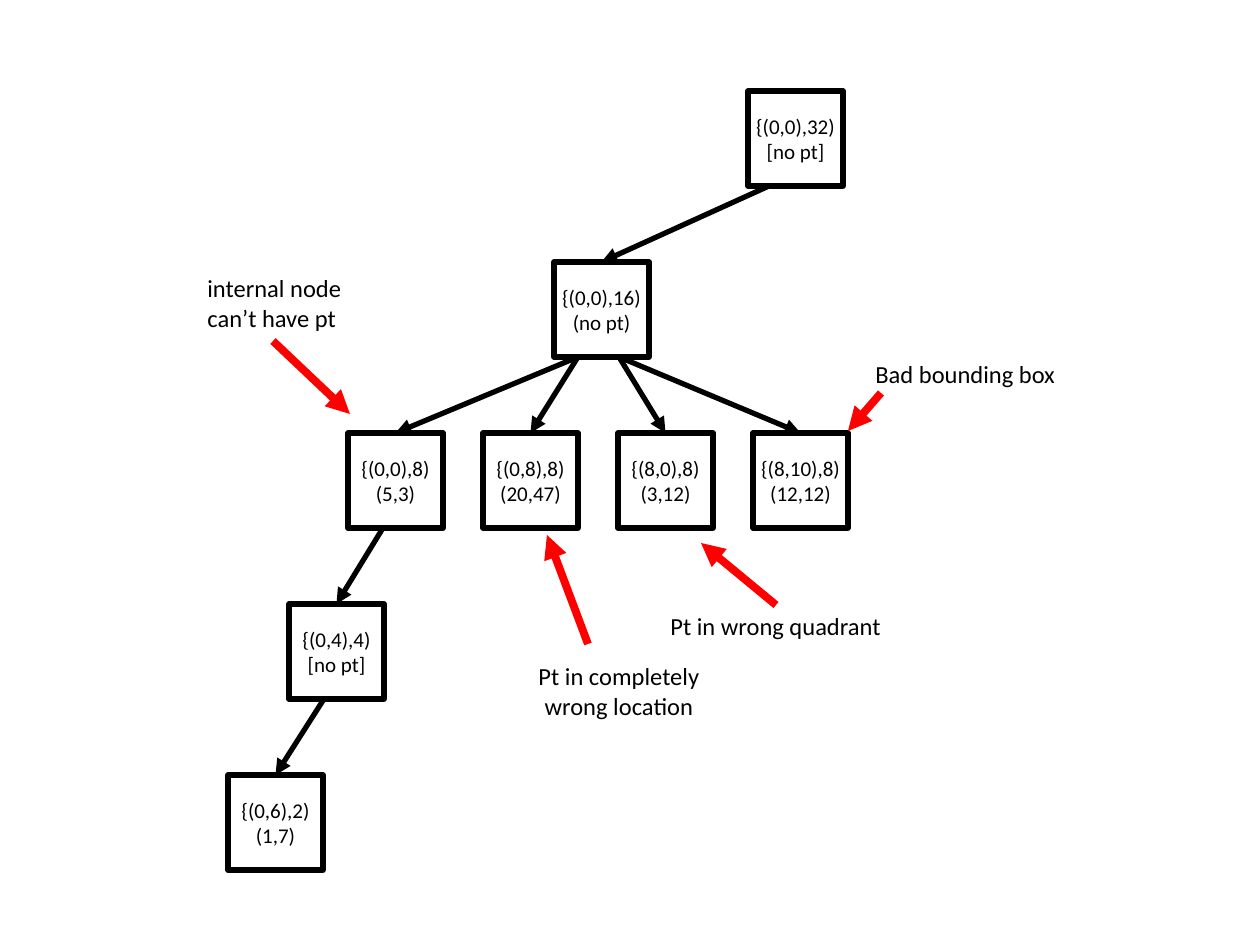
from copy import deepcopy

from lxml import etree
from pptx import Presentation, util as u
from pptx.dml.color import RGBColor
from pptx.enum import shapes, text
from pptx.oxml import ns

BLACK = RGBColor(0, 0, 0)
WHITE = RGBColor(255, 255, 255)
RED = RGBColor(255, 0, 0)
SCALE = u.Inches(1) / 126
NODE_SIZE = 95
ROOT_TOP = 91
LEVEL_GAP = 171
LEAF_LEFT = 348
LEAF_GAP = 135

QUADRANTS = [
    "{(0,0),8)\n(5,3)",
    "{(0,8),8)\n(20,47)",
    "{(8,0),8)\n(3,12)",
    "{(8,10),8)\n(12,12)",
]
NODES = {
    "half": (554, 1, "{(0,0),16)\n(no pt)"),
    **{
        f"quadrant {index}": (LEAF_LEFT + index * LEAF_GAP, 2, label)
        for index, label in enumerate(QUADRANTS)
    },
    "inner": (289, 3, "{(0,4),4)\n[no pt]"),
    "leaf": (228, 4, "{(0,6),2)\n(1,7)"),
    "root": (748, 0, "{(0,0),32)\n[no pt]"),
}
EDGES = [
    ("root", 21, "half"),
    ("half", 24, "quadrant 0"),
    ("half", 65, "quadrant 3"),
    ("half", 24, "quadrant 1"),
    ("half", 65, "quadrant 2"),
    ("quadrant 0", 35, "inner"),
    ("inner", 35, "leaf"),
]
LEFT = text.PP_ALIGN.LEFT
CENTER = text.PP_ALIGN.CENTER
NOTES = [
    ("Bad bounding box", (863, 353, 207, 43), LEFT, (18, 40), (-15, 78)),
    ("Pt in wrong quadrant", (658, 605, 238, 43), LEFT, (118, 0), (43, -62)),
    ("Pt in completely\nwrong location", (525, 655, 188, 72), CENTER, (63, -11), (22, -120)),
    ("internal node\ncan’t have pt", (195, 267, 161, 72), LEFT, (78, 74), (155, 147)),
]


def px(length):
    return round(length * SCALE)


def write_text(shape, words, size, align=LEFT, color=BLACK, font="Calibri"):
    paragraph = shape.text_frame.paragraphs[0]
    paragraph.text = words
    paragraph.alignment = align
    for run in paragraph.runs:
        run.font.size = u.Pt(size)
        run.font.name = font
        run.font.color.rgb = color
    for line_break in paragraph._p.findall(ns.qn("a:br")):
        line_break.append(deepcopy(paragraph.runs[0]._r.rPr))


def add_arrow(slide, start, end, color, width):
    arrow = slide.shapes.add_connector(
        shapes.MSO_CONNECTOR.STRAIGHT, *map(px, (*start, *end))
    )
    arrow.line.color.rgb = color
    arrow.line.width = u.Pt(width)
    line = arrow.line._get_or_add_ln()
    etree.SubElement(line, ns.qn("a:tailEnd"), type="triangle")
    etree.SubElement(arrow._element.spPr, ns.qn("a:effectLst"))


def add_node(slide, left, top, label):
    node = slide.shapes.add_shape(
        shapes.MSO_SHAPE.RECTANGLE, *map(px, (left, top, NODE_SIZE, NODE_SIZE))
    )
    node.shadow.inherit = False
    node.fill.solid()
    node.fill.fore_color.rgb = WHITE
    node.line.color.rgb = BLACK
    node.line.width = u.Pt(3)
    frame = node.text_frame
    frame.margin_left = frame.margin_right = 0
    frame.margin_top = frame.margin_bottom = 0
    frame.vertical_anchor = text.MSO_ANCHOR.MIDDLE
    write_text(node, label, size=12, align=CENTER)


def add_tree(slide, left, top):
    places = {
        name: (left + x, top + level * LEVEL_GAP)
        for name, (x, level, label) in NODES.items()
    }
    for name, (x, level, label) in NODES.items():
        add_node(slide, *places[name], label)
    for parent, offset, child in EDGES:
        parent_left, parent_top = places[parent]
        child_left, child_top = places[child]
        start = (parent_left + offset, parent_top + NODE_SIZE)
        end = (child_left + NODE_SIZE / 2, child_top)
        add_arrow(slide, start, end, BLACK, 3)


def add_note(slide, words, box, align):
    note = slide.shapes.add_textbox(*map(px, box))
    note.text_frame.word_wrap = False
    note.text_frame.auto_size = text.MSO_AUTO_SIZE.SHAPE_TO_FIT_TEXT
    write_text(note, words, size=14, align=align)


def add_notes(slide):
    for words, box, align, start, end in NOTES:
        add_note(slide, words, box, align)
    for words, (left, top, width, height), align, start, end in NOTES:
        add_arrow(
            slide,
            (left + start[0], top + start[1]),
            (left + end[0], top + end[1]),
            RED,
            4.5,
        )


def main():
    presentation = Presentation()
    presentation.slide_width = u.Inches(10)
    presentation.slide_height = u.Inches(7.5)
    slide = presentation.slides.add_slide(presentation.slide_layouts[6])
    add_tree(slide, 0, ROOT_TOP)
    add_notes(slide)
    presentation.save("out.pptx")


if __name__ == "__main__":
    main()
